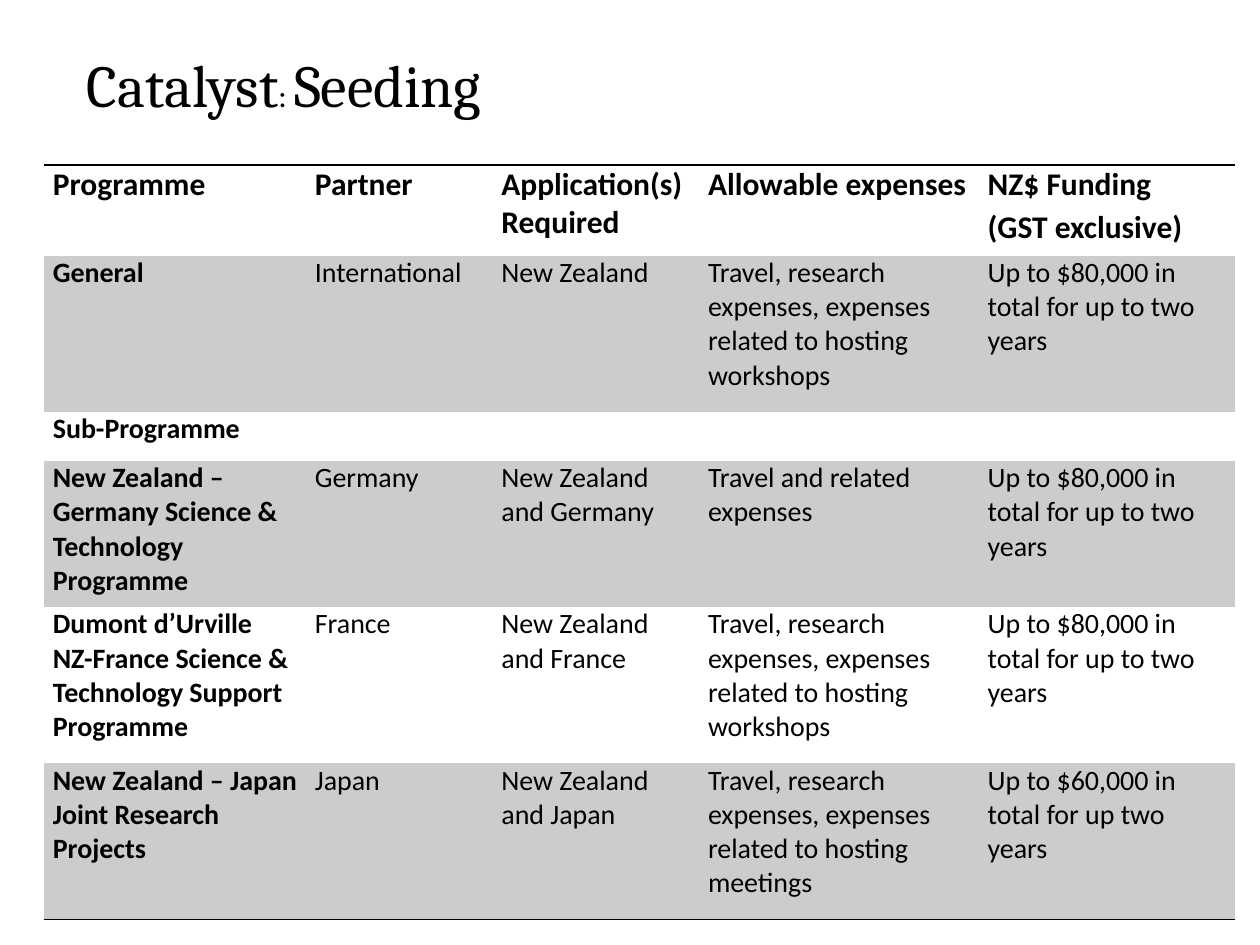
from dataclasses import dataclass
from itertools import accumulate

from lxml.etree import SubElement
from pptx import Presentation
from pptx.dml.color import RGBColor
from pptx.enum.text import MSO_ANCHOR, MSO_AUTO_SIZE, PP_ALIGN
from pptx.oxml.ns import qn
from pptx.util import Inches, Pt

COLOURS = {"ink": "000000", "band": "CCCCCC"}
BODY_FONT = "Calibri"
TITLE_FONT = "Cambria"
COLUMN_WIDTHS = [2.08, 1.48, 1.64, 2.22, 2.03]
ROW_HEIGHTS = [0.72, 1.24, 0.39, 1.16, 1.24, 1.24]
TABLE_LEFT, TABLE_TOP = 0.35, 1.31
SIDE_MARGIN = 0.07
TWO_YEARS = "Up to $80,000 in total for up to two years"
WORKSHOPS = "Travel, research expenses, expenses related to hosting workshops"


@dataclass(frozen=True)
class Programme:
    cells: tuple
    size: int = 16
    shaded: bool = False
    bold: bool = False
    justified: bool = False
    ruled_sides: str = ""


PROGRAMMES = [
    Programme(
        ("Programme", "Partner", "Application(s) Required", "Allowable expenses",
         "NZ$ Funding\n(GST exclusive)"),
        size=18, bold=True, justified=True, ruled_sides="TB"),
    Programme(("General", "International", "New Zealand", WORKSHOPS, TWO_YEARS), shaded=True),
    Programme(("Sub-Programme",), justified=True),
    Programme(
        ("New Zealand – Germany Science & Technology Programme", "Germany",
         "New Zealand and Germany", "Travel and related expenses", TWO_YEARS),
        shaded=True),
    Programme(
        ("Dumont d’Urville NZ-France Science & Technology Support Programme", "France",
         "New Zealand and France", WORKSHOPS, TWO_YEARS)),
    Programme(
        ("New Zealand – Japan Joint Research Projects", "Japan", "New Zealand and Japan",
         "Travel, research expenses, expenses related to hosting meetings",
         "Up to $60,000 in total for up two years"),
        shaded=True, ruled_sides="B"),
]


def add_run(paragraph, text: str, size: float, font: str, bold: bool = False) -> None:
    run = paragraph.add_run()
    run.text = text
    run.font.size = Pt(size)
    run.font.name = font
    run.font.bold = bold
    run.font.color.rgb = RGBColor.from_string(COLOURS["ink"])


def set_borders(cell, ruled_sides: str) -> None:
    properties = cell._tc.get_or_add_tcPr()
    for side in "LRTB":
        border = SubElement(properties, qn(f"a:ln{side}"), w=str(Pt(1)))
        if side in ruled_sides:
            ink = SubElement(border, qn("a:solidFill"))
            SubElement(ink, qn("a:srgbClr"), val=COLOURS["ink"])
        else:
            SubElement(border, qn("a:noFill"))


def format_cell(cell, programme: Programme) -> None:
    cell.margin_left = cell.margin_right = Inches(SIDE_MARGIN)
    cell.margin_top = cell.margin_bottom = 0
    set_borders(cell, programme.ruled_sides)
    if programme.shaded:
        cell.fill.solid()
        cell.fill.fore_color.rgb = RGBColor.from_string(COLOURS["band"])
    else:
        cell.fill.background()


def write_cell(cell, text: str, programme: Programme, bold: bool) -> None:
    frame = cell.text_frame
    for index, line in enumerate(text.split("\n")):
        paragraph = frame.add_paragraph() if index else frame.paragraphs[0]
        paragraph.alignment = PP_ALIGN.JUSTIFY if programme.justified else PP_ALIGN.LEFT
        if index:
            paragraph.space_before = Pt(2.9)
        add_run(paragraph, line, programme.size, BODY_FONT, bold)


def add_title(slide) -> None:
    title = slide.shapes.title
    title.left, title.top = Inches(0.59), Inches(0.33)
    title.width, title.height = Inches(3.69), Inches(0.67)
    frame = title.text_frame
    frame.word_wrap = False
    frame.auto_size = MSO_AUTO_SIZE.SHAPE_TO_FIT_TEXT
    frame.vertical_anchor = MSO_ANCHOR.TOP
    heading = frame.paragraphs[0]
    heading.alignment = PP_ALIGN.LEFT
    add_run(heading, "Catalyst", 34, TITLE_FONT)
    add_run(heading, ": ", 18, BODY_FONT)
    add_run(heading, "Seeding", 34, TITLE_FONT)


def add_funding_table(slide) -> None:
    *_, width = accumulate(COLUMN_WIDTHS)
    *_, height = accumulate(ROW_HEIGHTS)
    funding = slide.shapes.add_table(
        len(ROW_HEIGHTS), len(COLUMN_WIDTHS),
        Inches(TABLE_LEFT), Inches(TABLE_TOP), Inches(width), Inches(height)).table
    funding.first_row = funding.horz_banding = False
    for column, column_width in zip(funding.columns, COLUMN_WIDTHS):
        column.width = Inches(column_width)
    for row, row_height, programme in zip(funding.rows, ROW_HEIGHTS, PROGRAMMES):
        row.height = Inches(row_height)
        for cell in row.cells:
            format_cell(cell, programme)
        for index, text in enumerate(programme.cells):
            write_cell(row.cells[index], text, programme, programme.bold or index == 0)
        if len(programme.cells) == 1:
            row.cells[0].merge(row.cells[len(COLUMN_WIDTHS) - 1])


def main() -> None:
    presentation = Presentation()
    presentation.slide_width, presentation.slide_height = Inches(10), Inches(7.5)
    slide = presentation.slides.add_slide(presentation.slide_layouts.get_by_name("Title Only"))
    add_title(slide)
    add_funding_table(slide)
    presentation.save("out.pptx")


if __name__ == "__main__":
    main()
